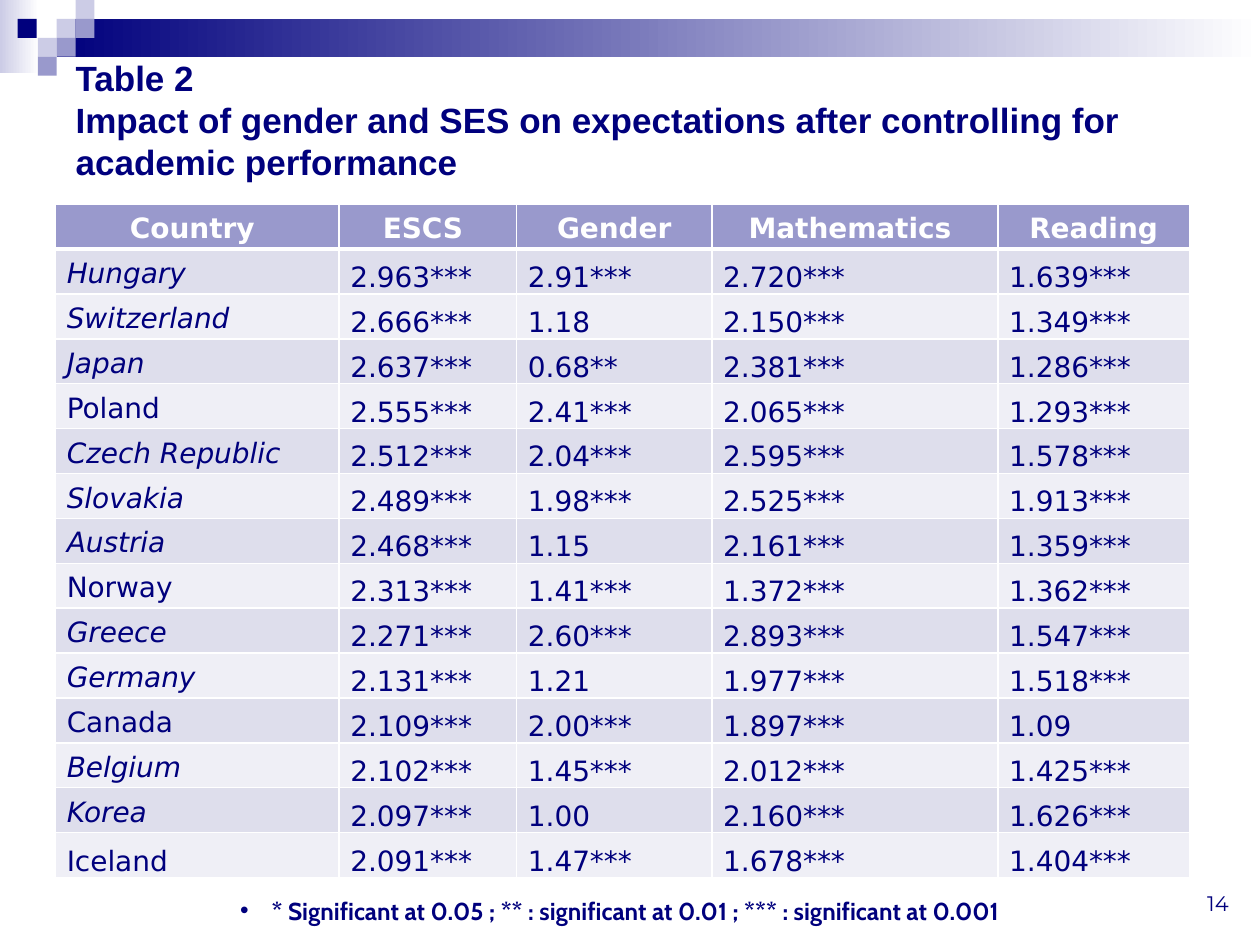
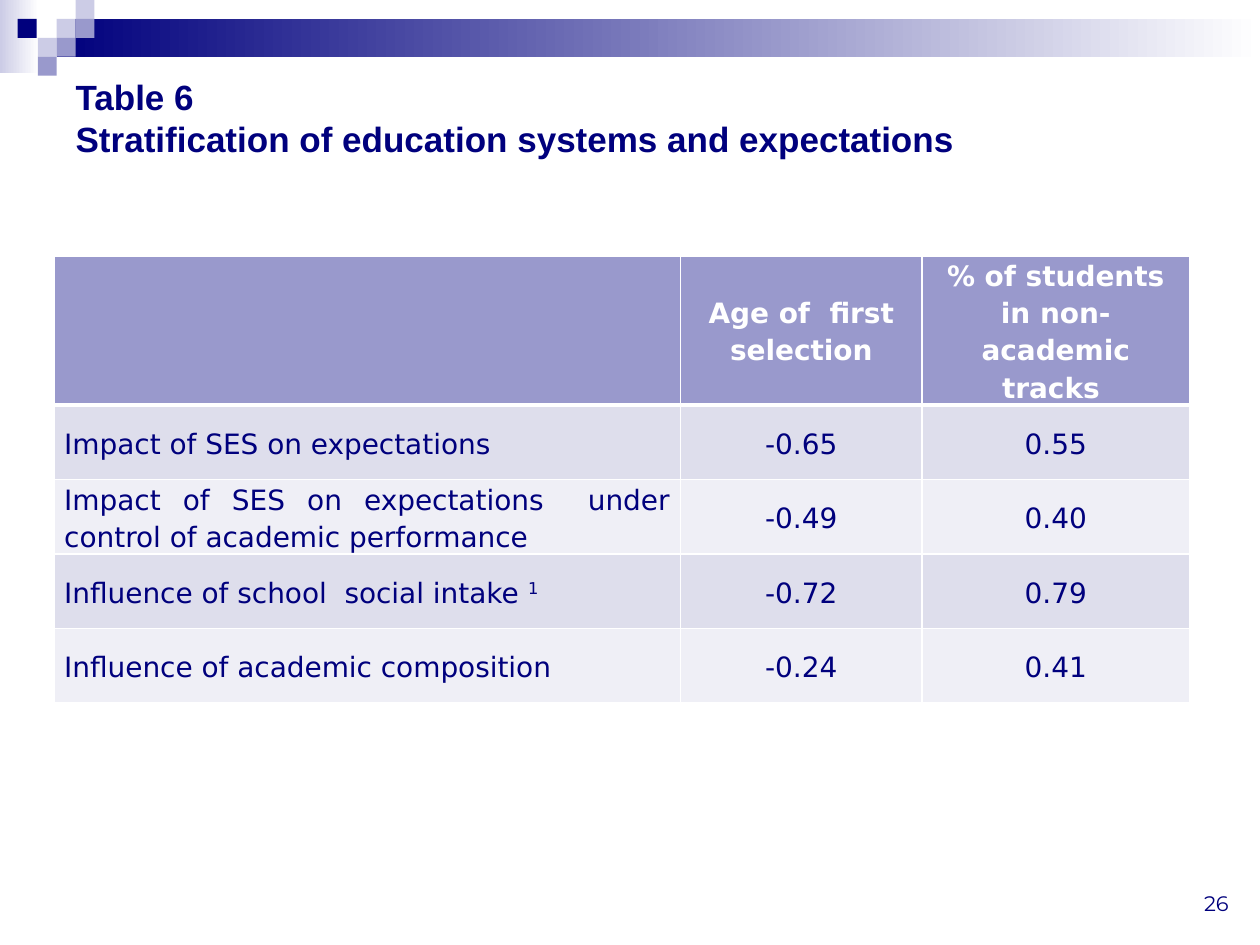
from lxml.etree import SubElement
from pptx import Presentation
from pptx.dml.color import RGBColor
from pptx.enum.shapes import MSO_SHAPE as Preset
from pptx.enum.text import MSO_ANCHOR as Anchor, MSO_AUTO_SIZE as AutoSize, PP_ALIGN as Align
from pptx.oxml.ns import qn
from pptx.util import Inches, Pt

NAVY = RGBColor(0x00, 0x00, 0x7D)
PERIWINKLE = RGBColor(0x99, 0x99, 0xCC)
LAVENDER = RGBColor(0xCC, 0xCC, 0xE6)
WHITE = RGBColor(0xFF, 0xFF, 0xFF)
ROW_FILLS = [RGBColor(0xDE, 0xDE, 0xEC), RGBColor(0xEF, 0xEF, 0xF6)]

TITLE_FONT = {"name": "Arial", "size": Pt(20), "bold": True}
TABLE_FONT = {"name": "DejaVu Sans", "size": Pt(16)}
NOTE_FONT = {"name": "Cabin", "size": Pt(14), "bold": True}
NUMBER_FONT = {"name": "Montserrat", "size": Pt(12)}

BANDS = [
    ((0, 0, 0.31, 0.58), LAVENDER),
    ((0.45, 0.15, 9.55, 0.3), NAVY),
]
SQUARE = 0.15
SQUARES = [
    (0.45, 0.15, LAVENDER),
    (0.6, 0, LAVENDER),
    (0.6, 0.15, PERIWINKLE),
    (0.3, 0.3, LAVENDER),
    (0.14, 0.15, NAVY),
    (0.45, 0.3, PERIWINKLE),
    (0.3, 0.45, PERIWINKLE),
]

UPRIGHT_COUNTRIES = {"Poland", "Norway", "Canada", "Iceland"}
SIGNIFICANCE_NOTE = "* Significant at 0.05 ; ** : significant at 0.01 ; *** : significant at 0.001"

GENDER_SLIDE = {
    "title": "Table 2\vImpact of gender and SES on expectations after controlling for  academic performance",
    "title_box": (0.5, 0.5, 9, 0.89),
    "title_bottom": 0.05,
    "number": "14",
    "table_box": (0.44, 1.62, 9, 5.35),
    "columns": [2.25, 1.41, 1.55, 2.27, 1.52],
    "row_shares": [1] * 15,
    "margin": 0.09,
    "space_after": 10,
    "label_align": Align.LEFT,
    "value_align": Align.LEFT,
    "value_anchor": Anchor.BOTTOM,
    "bottom_labels": {"Iceland"},
    "italic_labels": True,
    "rows": [
        ("Country ", "ESCS ", "Gender", "Mathematics ", "Reading"),
        ("Hungary", "2.963***", "2.91***", "2.720***", "1.639***"),
        ("Switzerland", "2.666***", "1.18", "2.150***", "1.349***"),
        ("Japan", "2.637***", "0.68**", "2.381***", "1.286***"),
        ("Poland", "2.555***", "2.41***", "2.065***", "1.293***"),
        ("Czech Republic", "2.512***", "2.04***", "2.595***", "1.578***"),
        ("Slovakia", "2.489***", "1.98***", "2.525***", "1.913***"),
        ("Austria", "2.468***", "1.15", "2.161***", "1.359***"),
        ("Norway", "2.313***", "1.41***", "1.372***", "1.362***"),
        ("Greece", "2.271***", "2.60***", "2.893***", "1.547***"),
        ("Germany", "2.131***", "1.21", "1.977***", "1.518***"),
        ("Canada", "2.109***", "2.00***", "1.897***", "1.09"),
        ("Belgium", "2.102***", "1.45***", "2.012***", "1.425***"),
        ("Korea", "2.097***", "1.00", "2.160***", "1.626***"),
        ("Iceland", "2.091***", "1.47***", "1.678***", "1.404***"),
    ],
}

STRATIFICATION_SLIDE = {
    "title": "Table 6\vStratification of education systems and expectations",
    "title_box": (0.5, 0.5, 9, 1.2),
    "title_bottom": 0.38,
    "number": "26",
    "table_box": (0.43, 2.03, 9, 3.55),
    "columns": [4.97, 1.92, 2.12],
    "row_shares": [2, 1, 1, 1, 1],
    "margin": 0.08,
    "space_after": 0,
    "label_align": Align.JUSTIFY,
    "value_align": Align.CENTER,
    "value_anchor": Anchor.MIDDLE,
    "bottom_labels": set(),
    "italic_labels": False,
    "rows": [
        ("", "Age of  first selection", "% of students in non- academic tracks "),
        ("Impact of SES on expectations", "-0.65", "0.55"),
        ("Impact of SES on expectations  under control of academic performance", "-0.49", "0.40"),
        ("Influence of school  social intake ^1", "-0.72", "0.79"),
        ("Influence of academic composition", "-0.24", "0.41"),
    ],
}


def apply_format(target, values):
    for name, value in values.items():
        setattr(target, name, value)


def format_font(font, values, color=NAVY):
    apply_format(font, values)
    font.color.rgb = color


def inches(box):
    return [Inches(length) for length in box]


def add_rectangle(slide, box):
    shape = slide.shapes.add_shape(Preset.RECTANGLE, *inches(box))
    shape.shadow.inherit = False
    shape.line.fill.background()
    return shape


def decorate_layout(layout, slide):
    decorations = []
    for box, color in BANDS:
        band = add_rectangle(slide, box)
        band.fill.gradient()
        band.fill.gradient_angle = 0
        for stop, stop_color in zip(band.fill.gradient_stops, (color, WHITE)):
            stop.color.rgb = stop_color
        decorations.append(band)
    for left, top, color in SQUARES:
        square = add_rectangle(slide, (left, top, SQUARE, SQUARE))
        square.fill.solid()
        square.fill.fore_color.rgb = color
        decorations.append(square)
    for shape in decorations:
        layout.shapes.element.append(shape.element)


def set_title(slide, content):
    title = slide.shapes.title
    apply_format(title, dict(zip(("left", "top", "width", "height"), inches(content["title_box"]))))
    frame = title.text_frame
    frame.text = content["title"]
    apply_format(frame, {
        "auto_size": AutoSize.NONE,
        "word_wrap": True,
        "vertical_anchor": Anchor.MIDDLE,
        "margin_bottom": Inches(content["title_bottom"]),
    })
    paragraph = frame.paragraphs[0]
    paragraph.alignment = Align.LEFT
    for run in paragraph.runs:
        format_font(run.font, TITLE_FONT)


def add_text(slide, box, text, font_values, alignment, anchor):
    frame = slide.shapes.add_textbox(*inches(box)).text_frame
    apply_format(frame, {"word_wrap": True, "vertical_anchor": anchor})
    paragraph = frame.paragraphs[0]
    paragraph.alignment = alignment
    run = paragraph.add_run()
    run.text = text
    format_font(run.font, font_values)
    return paragraph


def add_bullet(paragraph, indent):
    properties = paragraph._p.get_or_add_pPr()
    properties.set("marL", str(Inches(indent)))
    properties.set("indent", str(-Inches(indent)))
    SubElement(properties, qn("a:buFont"), typeface="Arial")
    SubElement(properties, qn("a:buChar"), char="•")


def set_borders(cell, bottom_width):
    properties = cell._tc.get_or_add_tcPr()
    for side, width in (("L", 1), ("R", 1), ("T", 1), ("B", bottom_width)):
        line = SubElement(properties, qn(f"a:ln{side}"), w=str(Pt(width)))
        fill = SubElement(line, qn("a:solidFill"))
        SubElement(fill, qn("a:srgbClr"), val=str(WHITE))


def fill_cell(cell, text, content, row_index, column_index):
    is_header = row_index == 0
    is_label = column_index == 0 and not is_header
    set_borders(cell, 3 if is_header else 1)
    cell.fill.solid()
    cell.fill.fore_color.rgb = PERIWINKLE if is_header else ROW_FILLS[(row_index - 1) % 2]

    alignment, anchor = content["value_align"], content["value_anchor"]
    if is_header:
        alignment, anchor = Align.CENTER, Anchor.MIDDLE
    elif is_label:
        alignment = content["label_align"]
        anchor = Anchor.BOTTOM if text in content["bottom_labels"] else Anchor.MIDDLE
    side = Inches(content["margin"])
    apply_format(cell, {
        "margin_left": side, "margin_right": side,
        "margin_top": 0, "margin_bottom": 0, "vertical_anchor": anchor,
    })

    paragraph = cell.text_frame.paragraphs[0]
    apply_format(paragraph, {
        "alignment": alignment,
        "line_spacing": 1.15,
        "space_after": Pt(content["space_after"]),
    })
    italic = is_label and content["italic_labels"] and text not in UPRIGHT_COUNTRIES
    body, _, superscript = text.partition("^")
    for part in filter(None, (body, superscript)):
        run = paragraph.add_run()
        run.text = part
        format_font(run.font, TABLE_FONT | {"bold": is_header, "italic": italic},
                    WHITE if is_header else NAVY)
        if part == superscript:
            run._r.get_or_add_rPr().set("baseline", "30000")


def add_data_table(slide, content):
    rows, columns, shares = content["rows"], content["columns"], content["row_shares"]
    table = slide.shapes.add_table(len(rows), len(columns), *inches(content["table_box"])).table
    for column, width in zip(table.columns, columns):
        column.width = Inches(width)
    for row, share in zip(table.rows, shares):
        row.height = Inches(content["table_box"][3] * share / sum(shares))
    for row_index, row in enumerate(rows):
        for column_index, text in enumerate(row):
            fill_cell(table.cell(row_index, column_index), text, content, row_index, column_index)


def build_slide(presentation, layout, content):
    slide = presentation.slides.add_slide(layout)
    set_title(slide, content)
    add_data_table(slide, content)
    add_text(slide, (7.52, 6.82, 2.33, 0.5), content["number"], NUMBER_FONT, Align.RIGHT, Anchor.BOTTOM)
    return slide


def main():
    presentation = Presentation()
    apply_format(presentation, {"slide_width": Inches(10), "slide_height": Inches(7.5)})
    layout = presentation.slide_layouts.get_by_name("Title Only")

    gender_slide = build_slide(presentation, layout, GENDER_SLIDE)
    note = add_text(gender_slide, (0.43, 7.06, 8.98, 0.57), SIGNIFICANCE_NOTE, NOTE_FONT,
                    Align.CENTER, Anchor.TOP)
    add_bullet(note, 0.25)
    decorate_layout(layout, gender_slide)

    build_slide(presentation, layout, STRATIFICATION_SLIDE)
    presentation.save("out.pptx")


if __name__ == "__main__":
    main()
